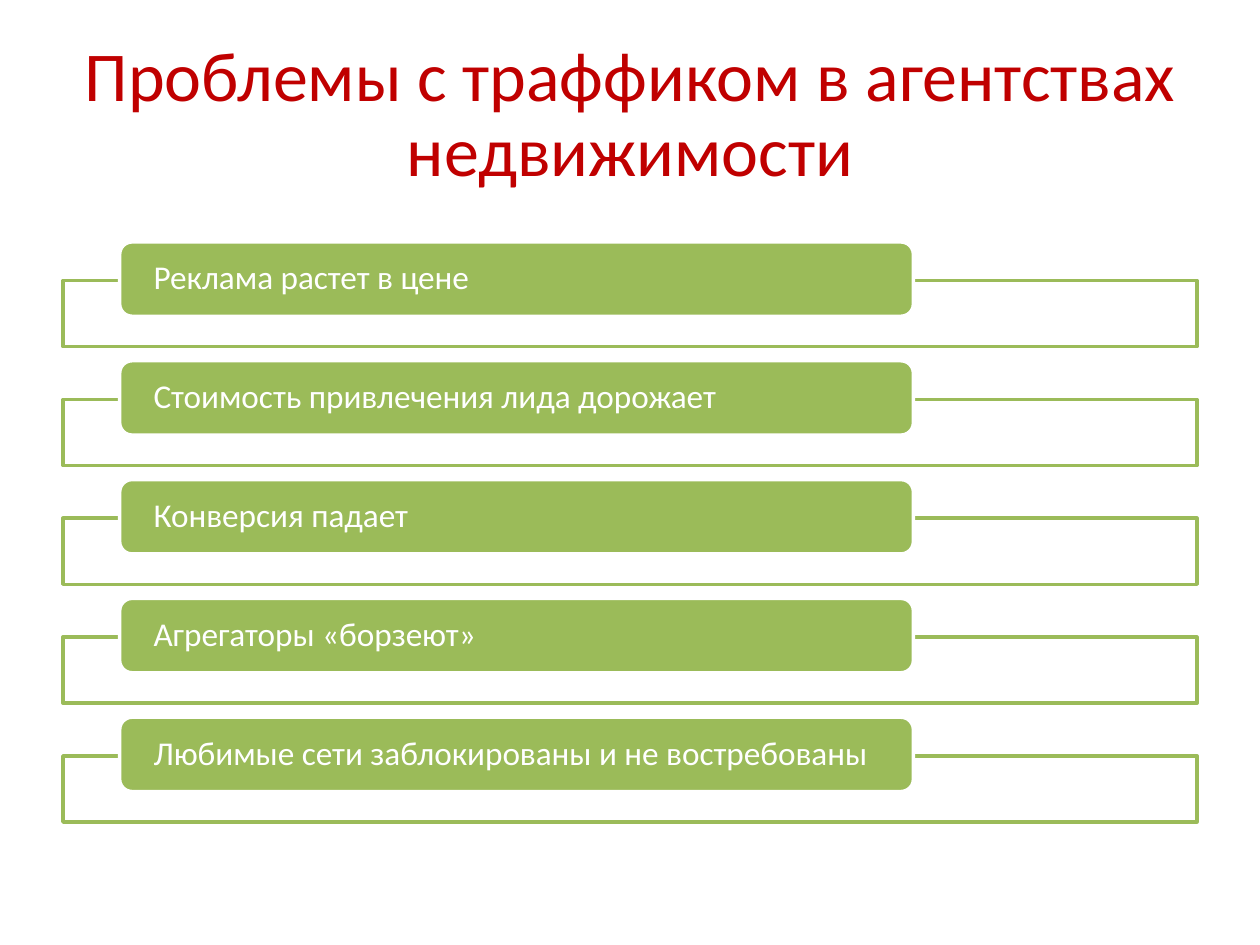
import pptx
import pptx.util
import pptx.dml.color
import pptx.enum.shapes
import pptx.enum.text
import lxml.etree

Pt = pptx.util.Pt
KIND = pptx.enum.shapes.MSO_SHAPE
ALIGN = pptx.enum.text.PP_ALIGN

TITLE = "Проблемы с траффиком в агентствах недвижимости"
ISSUES = [
    "Реклама растет в цене",
    "Стоимость привлечения лида дорожает",
    "Конверсия падает",
    "Агрегаторы «борзеют»",
    "Любимые сети заблокированы и не востребованы",
]
COLORS = {"title": "C00000", "green": "9BBB59", "white": "FFFFFF"}
FONT = "Calibri"

LEFT, WIDTH = 36, 648
TOP, STEP = 138.24, 67.9
TAB_LEFT, TAB_WIDTH, TAB_HIGH = 68.4, 453.6, 42.5
FRAME_DROP, FRAME_HIGH = 22.1, 37.8
INSET = 17.3


def color(name):
    return pptx.dml.color.RGBColor.from_string(COLORS[name])


def add_box(group, kind, place, fill, line):
    box = group.shapes.add_shape(kind, *[Pt(n) for n in place])
    box.shadow.inherit = False
    box.fill.solid()
    box.fill.fore_color.rgb = color(fill)
    box.line.color.rgb = color(line)
    box.line.width = Pt(2)
    return box


def fade(box, percent):
    """Set the opacity of a solid fill."""
    tone = box.fill._xPr.solidFill[0]
    tag = pptx.oxml.ns.qn("a:alpha")
    lxml.etree.SubElement(tone, tag).set("val", str(percent * 1000))


def write(shape, text, size, tint, align, inset):
    frame = shape.text_frame
    frame.word_wrap = True
    frame.auto_size = pptx.enum.text.MSO_AUTO_SIZE.NONE
    frame.vertical_anchor = pptx.enum.text.MSO_ANCHOR.MIDDLE
    frame.margin_left = frame.margin_right = Pt(inset)
    frame.margin_top = frame.margin_bottom = 0
    para = frame.paragraphs[0]
    para.alignment = align
    para.line_spacing = 0.9
    run = para.add_run()
    run.text = text
    run.font.name = FONT
    run.font.size = Pt(size)
    run.font.color.rgb = color(tint)


def main():
    deck = pptx.Presentation()
    deck.slide_width, deck.slide_height = Pt(720), Pt(540)
    slide = deck.slides.add_slide(deck.slide_layouts[5])

    title = slide.shapes.title
    title.left, title.top = Pt(LEFT), Pt(21.6)
    title.width, title.height = Pt(WIDTH), Pt(90)
    write(title, TITLE, 40, "title", ALIGN.CENTER, 7.2)

    group = slide.shapes.add_group_shape()
    for i, issue in enumerate(ISSUES):
        top = TOP + i * STEP
        frame = add_box(group, KIND.RECTANGLE,
                        (LEFT, top + FRAME_DROP, WIDTH, FRAME_HIGH),
                        "white", "green")
        fade(frame, 90)
        tab = add_box(group, KIND.ROUNDED_RECTANGLE,
                      (TAB_LEFT, top, TAB_WIDTH, TAB_HIGH),
                      "green", "white")
        write(tab, issue, 19, "white", ALIGN.LEFT, INSET)

    deck.save("out.pptx")


if __name__ == "__main__":
    main()
